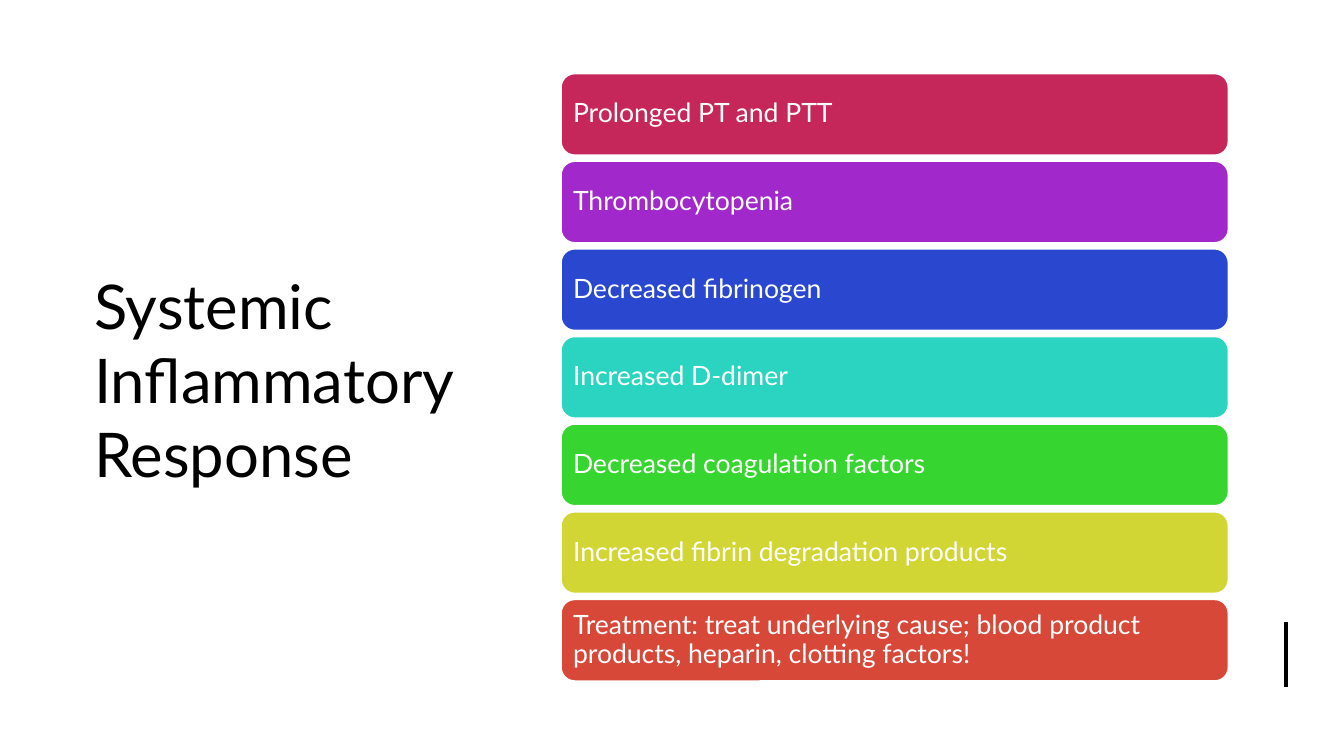
import pptx
import pptx.dml.color
import pptx.enum.shapes
import pptx.enum.text
import pptx.oxml.ns
import pptx.util
from lxml import etree

Pt = pptx.util.Pt

HEADING = "Systemic Inflammatory Response"
FINDINGS = [
    ("Prolonged PT and PTT", "crimson"),
    ("Thrombocytopenia", "purple"),
    ("Decreased fibrinogen", "blue"),
    ("Increased D-dimer", "turquoise"),
    ("Decreased coagulation factors", "green"),
    ("Increased fibrin degradation products", "yellow"),
    ("Treatment: treat underlying cause; blood product products, heparin, clotting factors!", "red"),
]
COLOURS = {
    "black": "000000",
    "white": "FFFFFF",
    "crimson": "C5275A",
    "purple": "A128CA",
    "blue": "2948CF",
    "turquoise": "2AD4C0",
    "green": "36D52F",
    "yellow": "D2D634",
    "red": "D74839",
}
FONT = "Lato"
BAR_LEFT, BAR_TOP, BAR_WIDTH, BAR_HEIGHT = 400.8, 52.6, 476.6, 58.2
BAR_PITCH = 62.6
BAR_MARGIN = 5.7


def colour(name):
    return pptx.dml.color.RGBColor.from_string(COLOURS[name])


def write(frame, text, size, ink):
    frame.text = text
    frame.word_wrap = True
    frame.auto_size = pptx.enum.text.MSO_AUTO_SIZE.NONE
    frame.vertical_anchor = pptx.enum.text.MSO_ANCHOR.MIDDLE
    paragraph = frame.paragraphs[0]
    paragraph.alignment = pptx.enum.text.PP_ALIGN.LEFT
    font = paragraph.runs[0].font
    font.name = FONT
    font.size = Pt(size)
    font.color.rgb = colour(ink)


def add_finding(slide, index, text, fill):
    bar = slide.shapes.add_shape(
        pptx.enum.shapes.MSO_SHAPE.ROUNDED_RECTANGLE,
        Pt(BAR_LEFT), Pt(BAR_TOP + index * BAR_PITCH), Pt(BAR_WIDTH), Pt(BAR_HEIGHT))
    bar.shadow.inherit = False
    bar.fill.solid()
    bar.fill.fore_color.rgb = colour(fill)
    bar.line.color.rgb = colour("white")
    bar.line.width = Pt(1)
    frame = bar.text_frame
    write(frame, text, 19, "white")
    frame.paragraphs[0].line_spacing = 0.9
    frame.margin_left = frame.margin_right = Pt(BAR_MARGIN)
    frame.margin_top = frame.margin_bottom = Pt(BAR_MARGIN)


def add_accent(slide):
    accent = slide.shapes.add_connector(
        pptx.enum.shapes.MSO_CONNECTOR.STRAIGHT, Pt(918.7), Pt(444.2), Pt(918.7), Pt(491))
    accent.line.color.rgb = colour("black")
    accent.line.width = Pt(3)
    etree.SubElement(accent.element.spPr, pptx.oxml.ns.qn("a:effectLst"))


def main():
    deck = pptx.Presentation()
    deck.slide_width, deck.slide_height = Pt(960), Pt(540)
    slide = deck.slides.add_slide(deck.slide_layouts[5])

    heading = slide.shapes.title
    heading.left, heading.top, heading.width, heading.height = Pt(60), Pt(67.7), Pt(271.4), Pt(406)
    write(heading.text_frame, HEADING, 44, "black")

    add_accent(slide)
    for index, (text, fill) in enumerate(FINDINGS):
        add_finding(slide, index, text, fill)

    deck.save("out.pptx")


if __name__ == "__main__":
    main()
